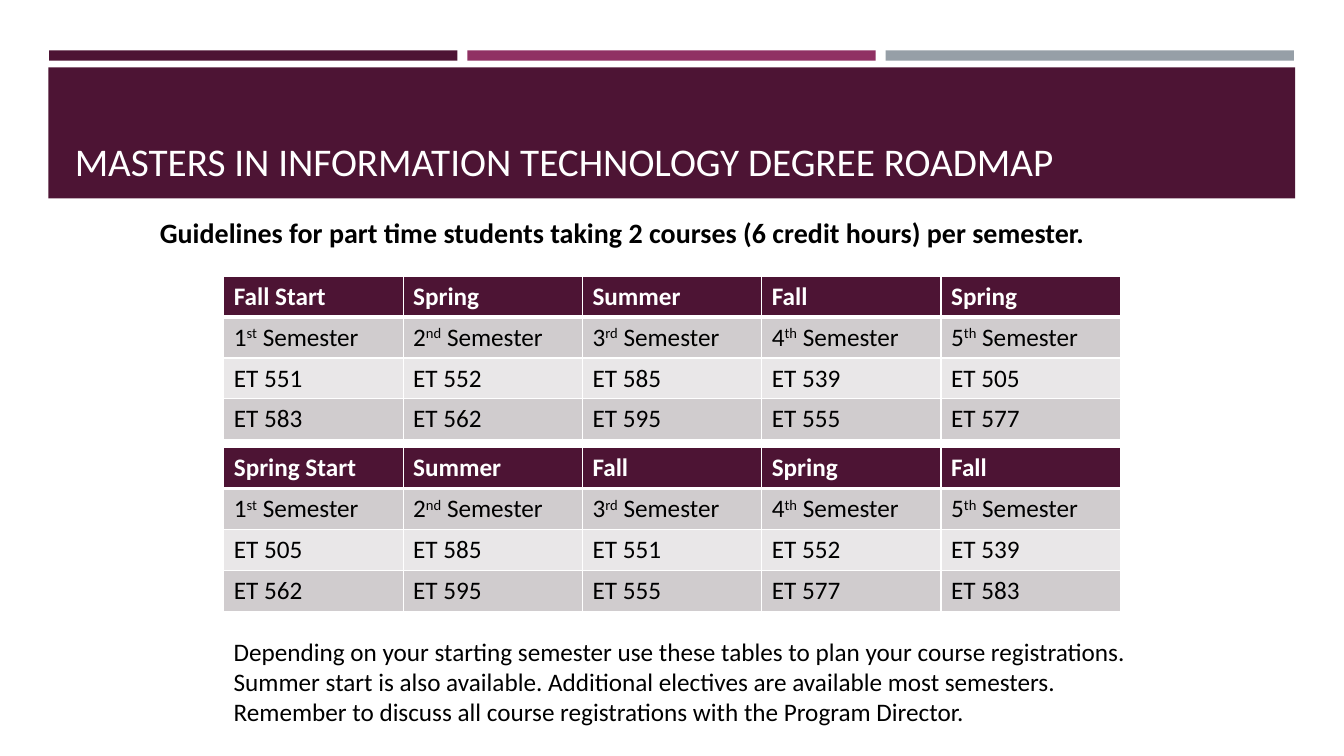
from dataclasses import dataclass

from lxml import etree
from pptx import Presentation
from pptx import util as u
from pptx.dml import color
from pptx.enum import shapes, text
from pptx.oxml import ns


@dataclass(frozen=True)
class Theme:
    font: str = "Calibri"
    plum: str = "4D1434"
    rose: str = "903163"
    slate: str = "969FA7"
    dark: str = "D0CCCE"
    light: str = "E9E7E8"
    white: str = "FFFFFF"
    black: str = "000000"
    head: int = 28
    lead: int = 20
    body: int = 18


THEME = Theme()
TERMS = [f"{num}^{end}^ Semester"
         for num, end in enumerate(["st", "nd", "rd", "th", "th"], 1)]
FALL = [
    ["Fall Start", "Spring", "Summer", "Fall", "Spring"],
    TERMS,
    ["ET 551", "ET 552", "ET 585", "ET 539", "ET 505"],
    ["ET 583", "ET 562", "ET 595", "ET 555", "ET 577"],
]
SPRING = [
    ["Spring Start", "Summer", "Fall", "Spring", "Fall"],
    TERMS,
    ["ET 505", "ET 585", "ET 551", "ET 552", "ET 539"],
    ["ET 562", "ET 595", "ET 555", "ET 577", "ET 583"],
]
NOTES = [
    "Depending on your starting semester use these tables to plan your course registrations.",
    "Summer start is also available. Additional electives are available most semesters.",
    "Remember to discuss all course registrations with the Program Director.",
]


def rgb(tone):
    return color.RGBColor.from_string(tone)


def write(frame, *lines, size=THEME.body, tone=THEME.black, bold=False):
    for pos, line in enumerate(lines):
        para = frame.add_paragraph() if pos else frame.paragraphs[0]
        para.alignment = text.PP_ALIGN.LEFT
        for part, words in enumerate(line.split("^")):
            run = para.add_run()
            run.text = words
            run.font.name = THEME.font
            run.font.size = u.Pt(size)
            run.font.bold = bold
            run.font.color.rgb = rgb(tone)
            if part % 2:
                run._r.get_or_add_rPr().set("baseline", "30000")


def add_bar(slide, left, top, width, height, tone):
    bar = slide.shapes.add_shape(
        shapes.MSO_SHAPE.RECTANGLE,
        u.Cm(left), u.Cm(top), u.Cm(width), u.Cm(height))
    bar.shadow.inherit = False
    bar.fill.solid()
    bar.fill.fore_color.rgb = rgb(tone)
    bar.line.fill.background()


def add_title(slide, words):
    title = slide.shapes.title
    title.left, title.top = u.Cm(1.63), u.Cm(1.96)
    title.width, title.height = u.Cm(30.63), u.Cm(2.82)
    frame = title.text_frame
    frame.auto_size = text.MSO_AUTO_SIZE.NONE
    frame.vertical_anchor = text.MSO_ANCHOR.BOTTOM
    write(frame, words, size=THEME.head, tone=THEME.white)
    title.element.getparent().append(title.element)


def add_note(slide, left, top, width, height, *lines, wrap=True, **style):
    box = slide.shapes.add_textbox(
        u.Cm(left), u.Cm(top), u.Cm(width), u.Cm(height))
    box.text_frame.word_wrap = wrap
    write(box.text_frame, *lines, **style)


def edge(cell, side, width):
    line = etree.SubElement(
        cell._tc.get_or_add_tcPr(), ns.qn(f"a:ln{side}"), w=str(u.Pt(width)))
    fill = etree.SubElement(line, ns.qn("a:solidFill"))
    etree.SubElement(fill, ns.qn("a:srgbClr"), val=THEME.white)


def add_plan(slide, top, rows):
    left, wide, high = 5.64, 4.52, 1.03
    cols = len(rows[0])
    grid = slide.shapes.add_table(
        len(rows), cols, u.Cm(left), u.Cm(top),
        u.Cm(wide * cols), u.Cm(high * len(rows))).table
    fills = [THEME.plum, THEME.dark, THEME.light, THEME.dark]
    for y, row in enumerate(rows):
        grid.rows[y].height = u.Cm(high)
        for x, words in enumerate(row):
            cell = grid.cell(y, x)
            thick = {"T": 3 if y == 1 else 1, "B": 3 if y == 0 else 1}
            for side in "LRTB":
                edge(cell, side, thick.get(side, 1))
            cell.fill.solid()
            cell.fill.fore_color.rgb = rgb(fills[y])
            tone = THEME.black if y else THEME.white
            write(cell.text_frame, words, tone=tone, bold=y == 0)
    for col in grid.columns:
        col.width = u.Cm(wide)


def main():
    deck = Presentation()
    deck.slide_width, deck.slide_height = u.Cm(33.87), u.Cm(19.05)
    slide = deck.slides.add_slide(deck.slide_layouts.get_by_name("Title Only"))
    for pos, tone in enumerate([THEME.plum, THEME.rose, THEME.slate]):
        add_bar(slide, 1.24 + 10.54 * pos, 1.27, 10.29, 0.26, tone)
    add_bar(slide, 1.22, 1.7, 31.42, 3.3, THEME.plum)
    add_title(slide, "MASTERS IN INFORMATION TECHNOLOGY DEGREE ROADMAP")
    add_plan(slide, 6.96, FALL)
    add_plan(slide, 11.28, SPRING)
    add_note(
        slide, 3.78, 5.31, 27.13, 1.12,
        "Guidelines for part time students taking 2 courses (6 credit hours) per semester.",
        wrap=False, size=THEME.lead, bold=True)
    add_note(slide, 5.64, 15.9, 23.11, 2.57, *NOTES)
    deck.save("out.pptx")


if __name__ == "__main__":
    main()
